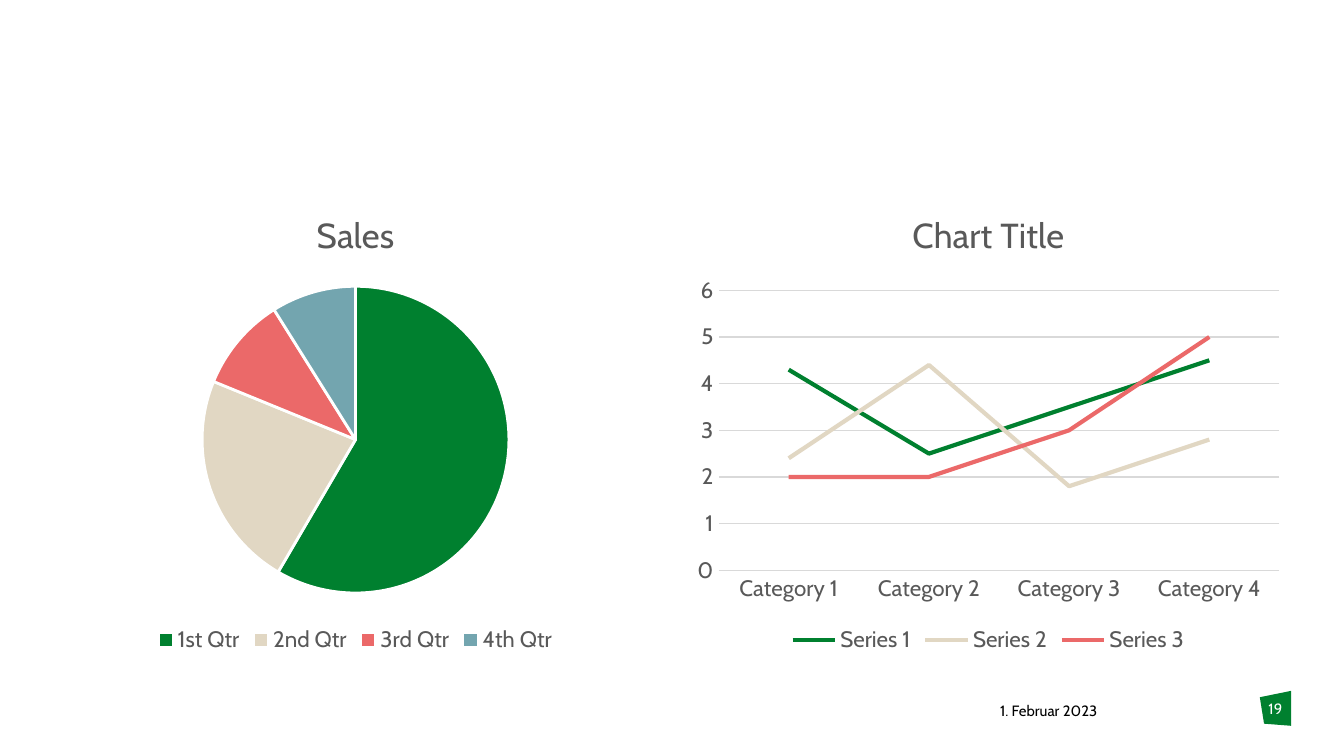
from pptx import Presentation
from pptx import util as u
from pptx.chart.data import CategoryChartData
from pptx.dml.color import RGBColor
from pptx.enum import chart as ch, text

COLORS = {
    "green": "00802F", "sand": "E1D7C3", "coral": "EB6969", "teal": "73A5AF",
    "gray": "595959", "grid": "D9D9D9", "black": "000000", "white": "FFFFFF",
}
PALETTE = ("green", "sand", "coral", "teal")
CHART_TOP, CHART_WIDTH, CHART_HEIGHT = 3.56, 11.46, 8.89


class SlideBuilder:
    def __init__(self, slide, font="Cabin"):
        self.slide = slide
        self.font_name = font

    def style(self, font, size, color):
        font.name = self.font_name
        font.size = u.Pt(size)
        font.bold = False
        font.color.rgb = self.rgb(color)

    @staticmethod
    def rgb(color):
        return RGBColor.from_string(COLORS[color])

    def line(self, line_format, color, width):
        line_format.color.rgb = self.rgb(color)
        line_format.width = u.Pt(width)

    def label(self, words, left, top, width, height, color, align):
        frame = self.slide.shapes.add_textbox(
            u.Cm(left), u.Cm(top), u.Cm(width), u.Cm(height)).text_frame
        frame.word_wrap = True
        frame.margin_left = frame.margin_right = 0
        frame.margin_top = frame.margin_bottom = 0
        paragraph = frame.paragraphs[0]
        paragraph.text = words
        paragraph.alignment = align
        self.style(paragraph.font, 8, color)

    def polygon(self, corners, color):
        points = [(u.Cm(x), u.Cm(y)) for x, y in corners]
        builder = self.slide.shapes.build_freeform(*points[0])
        builder.add_line_segments(points[1:], close=True)
        badge = builder.convert_to_shape()
        badge.fill.solid()
        badge.fill.fore_color.rgb = self.rgb(color)
        badge.line.fill.background()
        badge.shadow.inherit = False

    def chart(self, kind, left, title, categories, series):
        """Add a chart with the title and bottom legend both charts share."""
        data = CategoryChartData()
        data.categories = categories
        for name, values in series.items():
            data.add_series(name, values)
        chart = self.slide.shapes.add_chart(
            kind, u.Cm(left), u.Cm(CHART_TOP), u.Cm(CHART_WIDTH),
            u.Cm(CHART_HEIGHT), data).chart
        self.style(chart.font, 10, "black")
        chart.has_title = True
        heading = chart.chart_title.text_frame.paragraphs[0]
        heading.text = title
        self.style(heading.runs[0].font, 18.6, "gray")
        chart.has_legend = True
        chart.legend.position = ch.XL_LEGEND_POSITION.BOTTOM
        chart.legend.include_in_layout = False
        self.style(chart.legend.font, 12, "gray")
        return chart

    def pie_chart(self, left, title, categories, values):
        chart = self.chart(ch.XL_CHART_TYPE.PIE, left, title, categories,
                           {title: values})
        plot = chart.plots[0]
        plot.vary_by_categories = True
        for index, color in enumerate(PALETTE):
            wedge = plot.series[0].points[index].format
            wedge.fill.solid()
            wedge.fill.fore_color.rgb = self.rgb(color)
            self.line(wedge.line, "white", 1.5)

    def line_chart(self, left, title, categories, series):
        chart = self.chart(ch.XL_CHART_TYPE.LINE, left, title, categories, series)
        plot = chart.plots[0]
        plot.vary_by_categories = False
        for trend, color in zip(plot.series, PALETTE):
            trend.smooth = False
            trend.marker.style = ch.XL_MARKER_STYLE.NONE
            self.line(trend.format.line, color, 2.25)
        for axis in (chart.category_axis, chart.value_axis):
            axis.major_tick_mark = ch.XL_TICK_MARK.NONE
            axis.minor_tick_mark = ch.XL_TICK_MARK.NONE
            self.style(axis.tick_labels.font, 12, "gray")
        self.line(chart.category_axis.format.line, "grid", 0.75)
        values = chart.value_axis
        values.minimum_scale, values.maximum_scale, values.major_unit = 0, 6, 1
        values.format.line.fill.background()
        values.has_major_gridlines = True
        self.line(values.major_gridlines.format.line, "grid", 0.75)


def main():
    deck = Presentation()
    deck.slide_width, deck.slide_height = u.Cm(25.4), u.Cm(14.29)
    page = SlideBuilder(deck.slides.add_slide(deck.slide_layouts[6]))

    page.polygon([(23.81, 13.18), (24.4, 13.06), (24.4, 13.72), (23.89, 13.68)],
                 "green")
    page.label("1. Februar 2023", 18.9, 13.26, 3.28, 0.51, "black",
               text.PP_ALIGN.LEFT)
    page.pie_chart(0.99, "Sales", ["1st Qtr", "2nd Qtr", "3rd Qtr", "4th Qtr"],
                   (59, 23, 10, 9))
    page.line_chart(12.95, "Chart Title",
                    [f"Category {number}" for number in range(1, 5)],
                    {"Series 1": (4.3, 2.5, 3.5, 4.5),
                     "Series 2": (2.4, 4.4, 1.8, 2.8),
                     "Series 3": (2, 2, 3, 5)})
    page.label("19", 23.8, 13.23, 0.61, 0.76, "white", text.PP_ALIGN.CENTER)
    deck.save("out.pptx")


if __name__ == "__main__":
    main()
